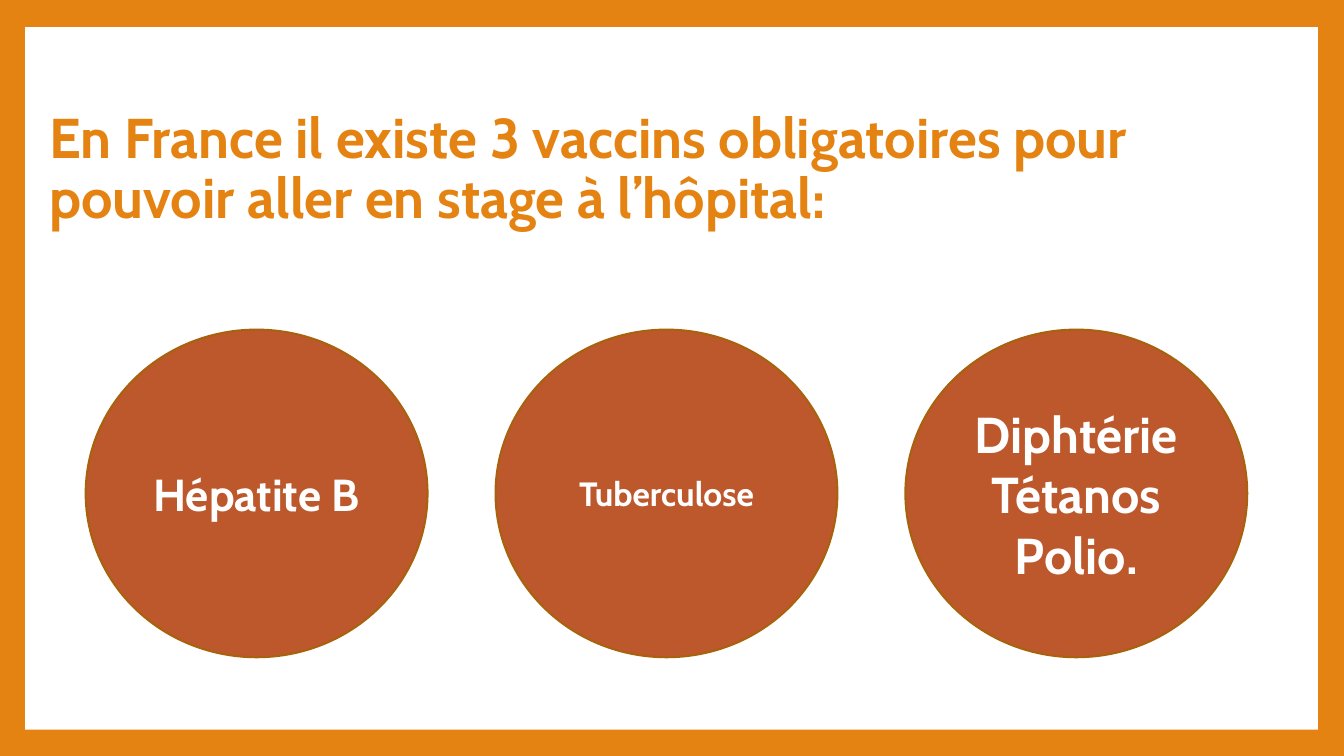
import pptx
import pptx.util
import pptx.dml.color
import pptx.enum.shapes
import pptx.enum.text

Inches = pptx.util.Inches
RGBColor = pptx.dml.color.RGBColor
MSO_SHAPE = pptx.enum.shapes.MSO_SHAPE
PP_ALIGN = pptx.enum.text.PP_ALIGN
MSO_ANCHOR = pptx.enum.text.MSO_ANCHOR

ORANGE = RGBColor(0xE4, 0x83, 0x12)
RUST = RGBColor(0xBD, 0x58, 0x2C)
BROWN = RGBColor(0xA9, 0x61, 0x0D)
WHITE = RGBColor(0xFF, 0xFF, 0xFF)


def add_run(p, text, size, color):
    r = p.add_run()
    r.text = text
    r.font.name = "Cabin"
    r.font.size = pptx.util.Pt(size)
    r.font.bold = True
    r.font.color.rgb = color


prs = pptx.Presentation()
prs.slide_width = Inches(13.33)
prs.slide_height = Inches(7.5)
s = prs.slides.add_slide(prs.slide_layouts[5])
s.background.fill.solid()
s.background.fill.fore_color.rgb = ORANGE

panel = s.shapes.add_shape(MSO_SHAPE.RECTANGLE, Inches(0.25), Inches(0.27), Inches(12.82), Inches(6.97))
panel.shadow.inherit = False
panel.fill.solid()
panel.fill.fore_color.rgb = WHITE
panel.line.fill.background()

title = s.shapes.title
title.element.addprevious(panel.element)
title.left, title.top = Inches(0.39), Inches(1.11)
title.width, title.height = Inches(12.76), Inches(1.16)
tf = title.text_frame
tf.word_wrap = True
tf.auto_size = pptx.enum.text.MSO_AUTO_SIZE.NONE
tf.vertical_anchor = MSO_ANCHOR.MIDDLE
p = tf.paragraphs[0]
p.alignment = PP_ALIGN.LEFT
p.line_spacing = 0.9
add_run(p, "En France il existe 3 vaccins obligatoires pour pouvoir aller en stage à l’hôpital:", 40, ORANGE)

vaccines = [
    (["Hépatite B"], 32),
    (["Tuberculose"], 24),
    (["Diphtérie", "Tétanos", "Polio."], 36),
]
for i, (names, size) in enumerate(vaccines):
    sp = s.shapes.add_shape(MSO_SHAPE.FLOWCHART_CONNECTOR, Inches(0.85 + 4.065 * i), Inches(3.27),
                            Inches(3.39), Inches(3.25))
    sp.shadow.inherit = False
    sp.fill.solid()
    sp.fill.fore_color.rgb = RUST
    sp.line.color.rgb = BROWN
    sp.line.width = pptx.util.Pt(1.5)
    tf = sp.text_frame
    tf.word_wrap = True
    tf.vertical_anchor = MSO_ANCHOR.MIDDLE
    for j, name in enumerate(names):
        p = tf.add_paragraph() if j else tf.paragraphs[0]
        p.alignment = PP_ALIGN.CENTER
        add_run(p, name, size, WHITE)

prs.save("out.pptx")
